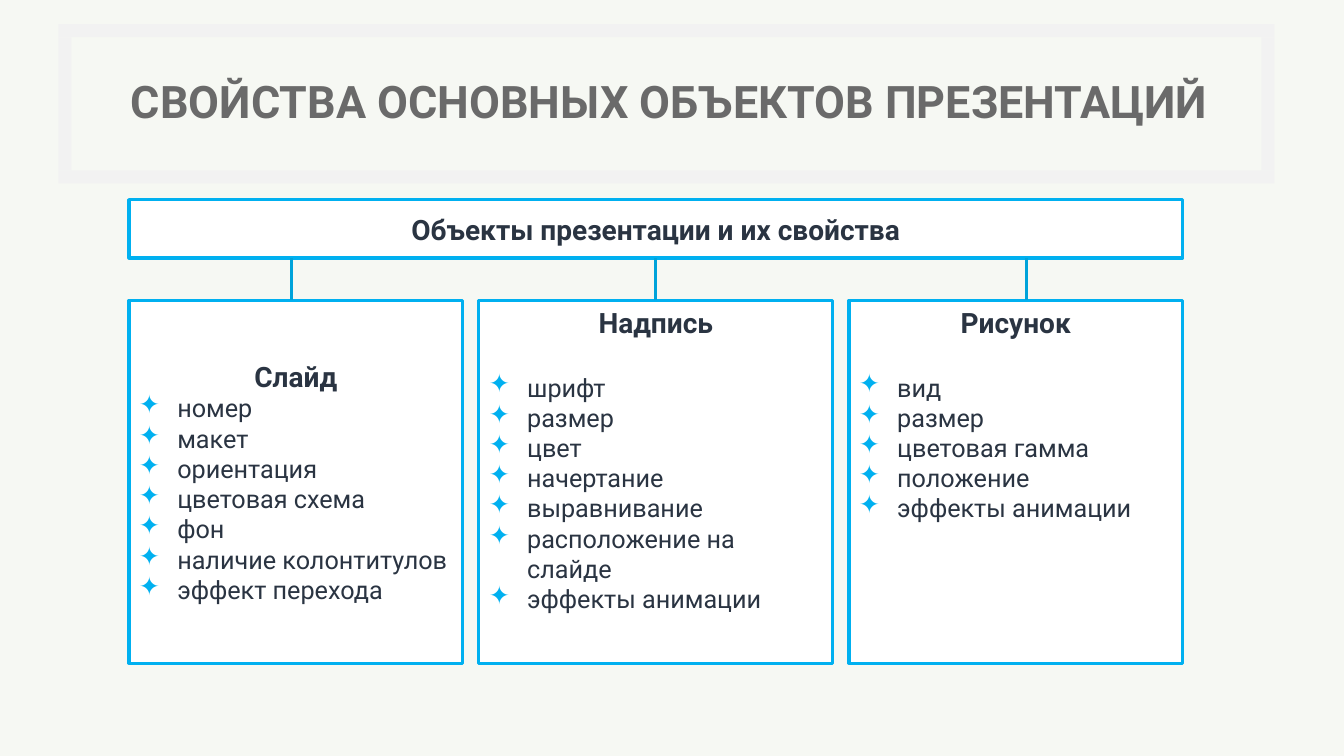
"""Build a slide listing the properties of the main presentation objects."""
from lxml import etree
from pptx import Presentation
from pptx.dml.color import RGBColor
from pptx.enum.shapes import MSO_CONNECTOR, MSO_SHAPE
from pptx.enum.text import MSO_ANCHOR, MSO_AUTO_SIZE, PP_ALIGN
from pptx.oxml.ns import qn
from pptx.util import Inches, Pt

RECTANGLE = MSO_SHAPE.RECTANGLE
STRAIGHT = MSO_CONNECTOR.STRAIGHT
TOP, MIDDLE = MSO_ANCHOR.TOP, MSO_ANCHOR.MIDDLE
LEFT, CENTER = PP_ALIGN.LEFT, PP_ALIGN.CENTER
NO_FIT = MSO_AUTO_SIZE.NONE

PAPER = RGBColor(0xF6, 0xF8, 0xF3)
FRAME = RGBColor(0xF2, 0xF2, 0xF2)
WHITE = RGBColor(0xFF, 0xFF, 0xFF)
GRAY = RGBColor(0x6A, 0x6A, 0x6A)
INK = RGBColor(0x2A, 0x34, 0x42)
BLUE = RGBColor(0x00, 0xB0, 0xF0)
LINK_BLUE = RGBColor(0x00, 0xA3, 0xDA)

TITLE = "СВОЙСТВА ОСНОВНЫХ ОБЪЕКТОВ ПРЕЗЕНТАЦИЙ"
HEADER = "Объекты презентации и их свойства"
CARDS = [
    {"name": "Слайд", "width": 3.31, "link": 2.89, "anchor": MIDDLE, "gap": 0,
     "items": ["номер", "макет", "ориентация", "цветовая схема", "фон",
               "наличие колонтитулов", "эффект перехода"]},
    {"name": "Надпись", "width": 3.51, "link": None, "anchor": TOP, "gap": 23.5,
     "items": ["шрифт", "размер", "цвет", "начертание", "выравнивание",
               "расположение на слайде", "эффекты анимации"]},
    {"name": "Рисунок", "width": 3.31, "link": 10.18, "anchor": TOP, "gap": 23.5,
     "items": ["вид", "размер", "цветовая гамма", "положение", "эффекты анимации"]},
]

TITLE_FONT = {"name": "Roboto", "size": Pt(32), "bold": True}
HEAD_FONT = {"name": "Roboto", "size": Pt(20), "bold": True}
ITEM_FONT = {"name": "Roboto", "size": Pt(18), "bold": False}

FRAME_LEFT, FRAME_TOP, FRAME_WIDTH, FRAME_HEIGHT, BAR = 0.58, 0.24, 12.06, 1.58, 0.13
GRID_LEFT, GRID_WIDTH, GUTTER = 1.28, 10.45, 0.16
HEADER_TOP, HEADER_HEIGHT = 1.98, 0.58
CARD_TOP, CARD_HEIGHT = 2.98, 3.6
LINE_WIDTH = Pt(2.25)
INDENT = Inches(0.38)


def write(para, text, font, color, align=CENTER):
    """Put one formatted span in a paragraph."""
    span = para.add_run()
    span.text = text
    for key, value in font.items():
        setattr(span.font, key, value)
    span.font.color.rgb = color
    para.alignment = align


def add_bullet(para):
    """Give a paragraph a hanging blue star."""
    props = para._p.get_or_add_pPr()
    props.set("marL", str(INDENT))
    props.set("indent", str(-INDENT))
    color = etree.SubElement(props, qn("a:buClr"))
    etree.SubElement(color, qn("a:srgbClr")).set("val", str(BLUE))
    etree.SubElement(props, qn("a:buChar")).set("char", "✦")


def add_box(page, place, fill, outline=None):
    """Add a flat rectangle, outlined on request."""
    box = page.shapes.add_shape(RECTANGLE, *map(Inches, place))
    box.shadow.inherit = False
    box.fill.solid()
    box.fill.fore_color.rgb = fill
    if outline is None:
        box.line.fill.background()
    else:
        box.line.color.rgb = outline
        box.line.width = LINE_WIDTH
    box.text_frame.word_wrap = True
    return box


def add_frame(page):
    """Draw the four bars around the title."""
    right = FRAME_LEFT + FRAME_WIDTH - BAR
    bottom = FRAME_TOP + FRAME_HEIGHT - BAR
    side_top, side_height = FRAME_TOP + BAR, FRAME_HEIGHT - 2 * BAR
    for top in (FRAME_TOP, bottom):
        add_box(page, (FRAME_LEFT, top, FRAME_WIDTH, BAR), FRAME)
    for left in (FRAME_LEFT, right):
        add_box(page, (left, side_top, BAR, side_height), FRAME)


def add_title(page):
    """Place and format the title."""
    title = page.shapes.title
    title.left, title.top, title.width, title.height = map(Inches, (0.7, 0.31, 11.88, 1.45))
    frame = title.text_frame
    frame.auto_size, frame.vertical_anchor, frame.word_wrap = NO_FIT, MIDDLE, True
    frame.paragraphs[0].line_spacing = 0.9
    write(frame.paragraphs[0], TITLE, TITLE_FONT, GRAY)


def add_card(page, card, left):
    """Add a card with its heading and bulleted properties."""
    box = add_box(page, (left, CARD_TOP, card["width"], CARD_HEIGHT), WHITE, BLUE)
    frame = box.text_frame
    frame.vertical_anchor = card["anchor"]
    heading = frame.paragraphs[0]
    heading.space_after = Pt(card["gap"])
    write(heading, card["name"], HEAD_FONT, INK)
    for item in card["items"]:
        para = frame.add_paragraph()
        write(para, item, ITEM_FONT, INK, LEFT)
        add_bullet(para)
    return box


def add_link(page, header, box, x):
    """Link the header to a card, joined at the centres when x is None."""
    start = Inches(x) if x else box.left + box.width // 2
    link = page.shapes.add_connector(
        STRAIGHT, start, header.top + header.height, start, box.top)
    if x is None:
        link.begin_connect(header, 2)
        link.end_connect(box, 0)
    link.line.color.rgb = LINK_BLUE
    link.line.width = LINE_WIDTH
    etree.SubElement(link._element.spPr, qn("a:effectLst"))


def main():
    """Build and save the deck."""
    deck = Presentation()
    deck.slide_width, deck.slide_height = Inches(13.33), Inches(7.5)
    page = deck.slides.add_slide(deck.slide_layouts[5])
    page.background.fill.solid()
    page.background.fill.fore_color.rgb = PAPER

    add_frame(page)
    add_title(page)
    header = add_box(page, (GRID_LEFT, HEADER_TOP, GRID_WIDTH, HEADER_HEIGHT), WHITE, BLUE)
    header.text_frame.vertical_anchor = MIDDLE
    write(header.text_frame.paragraphs[0], HEADER, HEAD_FONT, INK)

    left = GRID_LEFT
    for card in CARDS:
        box = add_card(page, card, left)
        add_link(page, header, box, card["link"])
        left += card["width"] + GUTTER
    deck.save("out.pptx")


if __name__ == "__main__":
    main()
